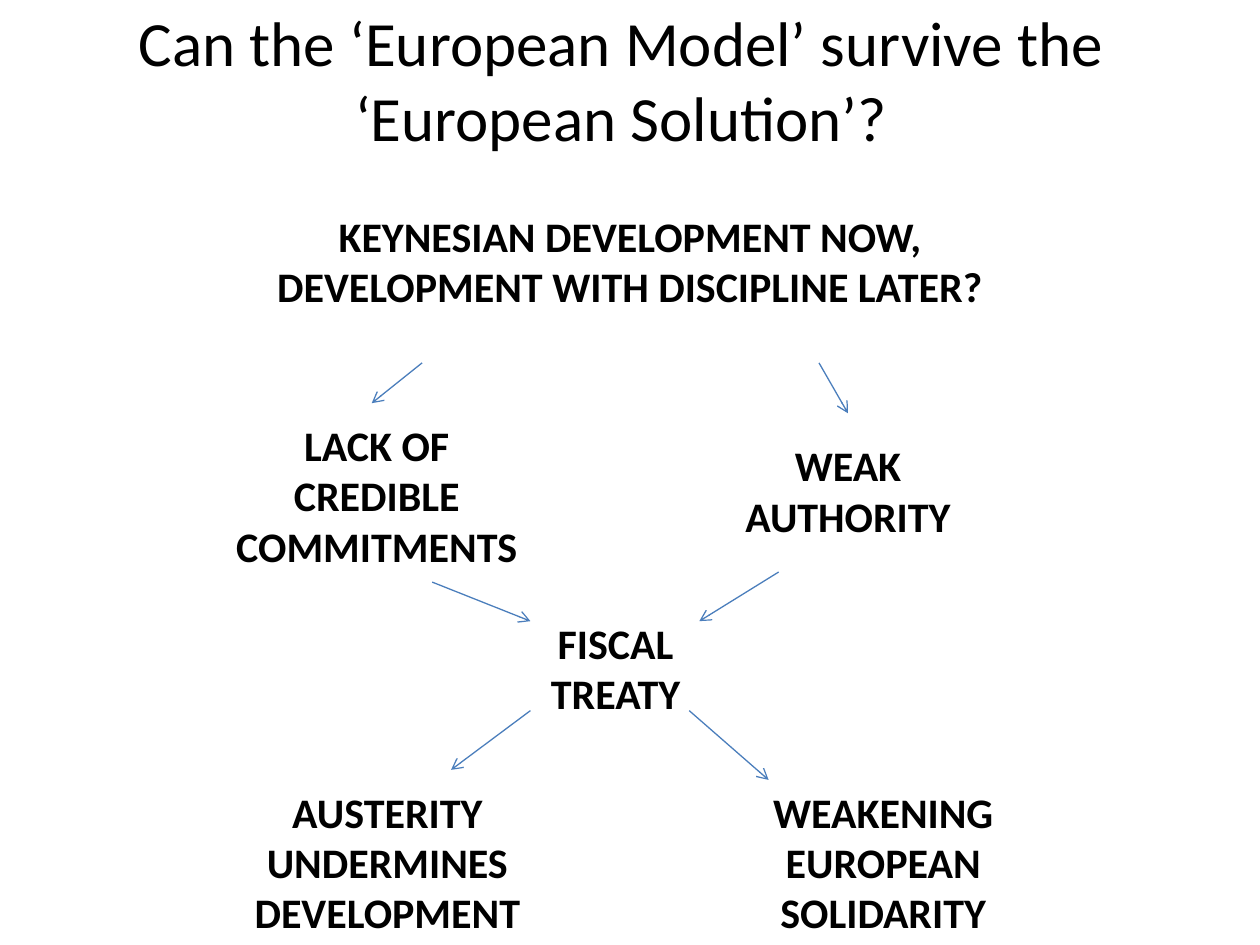
from lxml import etree
from pptx import Presentation
from pptx.dml.color import RGBColor
from pptx.enum.shapes import MSO_CONNECTOR
from pptx.enum.text import MSO_ANCHOR, MSO_AUTO_SIZE, PP_ALIGN
from pptx.oxml.ns import qn
from pptx.util import Inches, Pt

LINE = MSO_CONNECTOR.STRAIGHT
MIDDLE = MSO_ANCHOR.MIDDLE
GROW = MSO_AUTO_SIZE.SHAPE_TO_FIT_TEXT
FIXED = MSO_AUTO_SIZE.NONE
CENTER = PP_ALIGN.CENTER
BLACK = RGBColor(0x00, 0x00, 0x00)
BLUE = RGBColor(0x4B, 0x7E, 0xBC)
FONT = "Calibri"

TITLE = "Can the ‘European Model’ survive the ‘European Solution’?"
LABELS = [
    ("KEYNESIAN DEVELOPMENT NOW,\nDEVELOPMENT WITH DISCIPLINE LATER?", (1.38, 1.62, 7.24, 0.91)),
    ("LACK OF CREDIBLE\nCOMMITMENTS", (1.69, 3.28, 2.6, 1.31)),
    ("WEAK AUTHORITY", (5.47, 3.44, 2.52, 0.91)),
    ("FISCAL TREATY", (3.98, 4.85, 1.81, 0.91)),
    ("AUSTERITY UNDERMINES DEVELOPMENT", (1.46, 6.19, 3.23, 1.31)),
    ("WEAKENING EUROPEAN SOLIDARITY", (5.63, 6.19, 2.76, 1.31)),
]
ARROWS = [
    (3.35, 2.88, 2.95, 3.2),
    (6.5, 2.88, 6.73, 3.28),
    (3.43, 4.62, 4.21, 4.93),
    (6.18, 4.54, 5.55, 4.93),
    (4.21, 5.64, 3.58, 6.11),
    (5.47, 5.64, 6.1, 6.19),
]


def write(frame, text, size, bold):
    frame.text = text
    frame.word_wrap = True
    for para in frame.paragraphs:
        para.alignment = CENTER
        for run in para.runs:
            font = run.font
            font.name, font.size, font.bold = FONT, Pt(size), bold
            font.color.rgb = BLACK


def add_label(slide, text, place):
    frame = slide.shapes.add_textbox(*map(Inches, place)).text_frame
    write(frame, text, 24, True)
    frame.auto_size = GROW


def add_arrow(slide, ends):
    arrow = slide.shapes.add_connector(LINE, *map(Inches, ends))
    arrow.line.color.rgb = BLUE
    arrow.line.width = Pt(0.75)
    etree.SubElement(arrow.line._get_or_add_ln(), qn("a:tailEnd"), type="arrow")
    etree.SubElement(arrow._element.spPr, qn("a:effectLst"))


def main():
    deck = Presentation()
    deck.slide_width, deck.slide_height = Inches(10), Inches(7.5)
    slide = deck.slides.add_slide(deck.slide_layouts[5])
    title = slide.shapes.title
    title.left, title.top = Inches(0.43), Inches(0)
    title.width, title.height = Inches(9), Inches(1.25)
    write(title.text_frame, TITLE, 36, False)
    title.text_frame.vertical_anchor = MIDDLE
    title.text_frame.auto_size = FIXED
    for text, place in LABELS:
        add_label(slide, text, place)
    for ends in ARROWS:
        add_arrow(slide, ends)
    deck.save("out.pptx")


if __name__ == "__main__":
    main()
